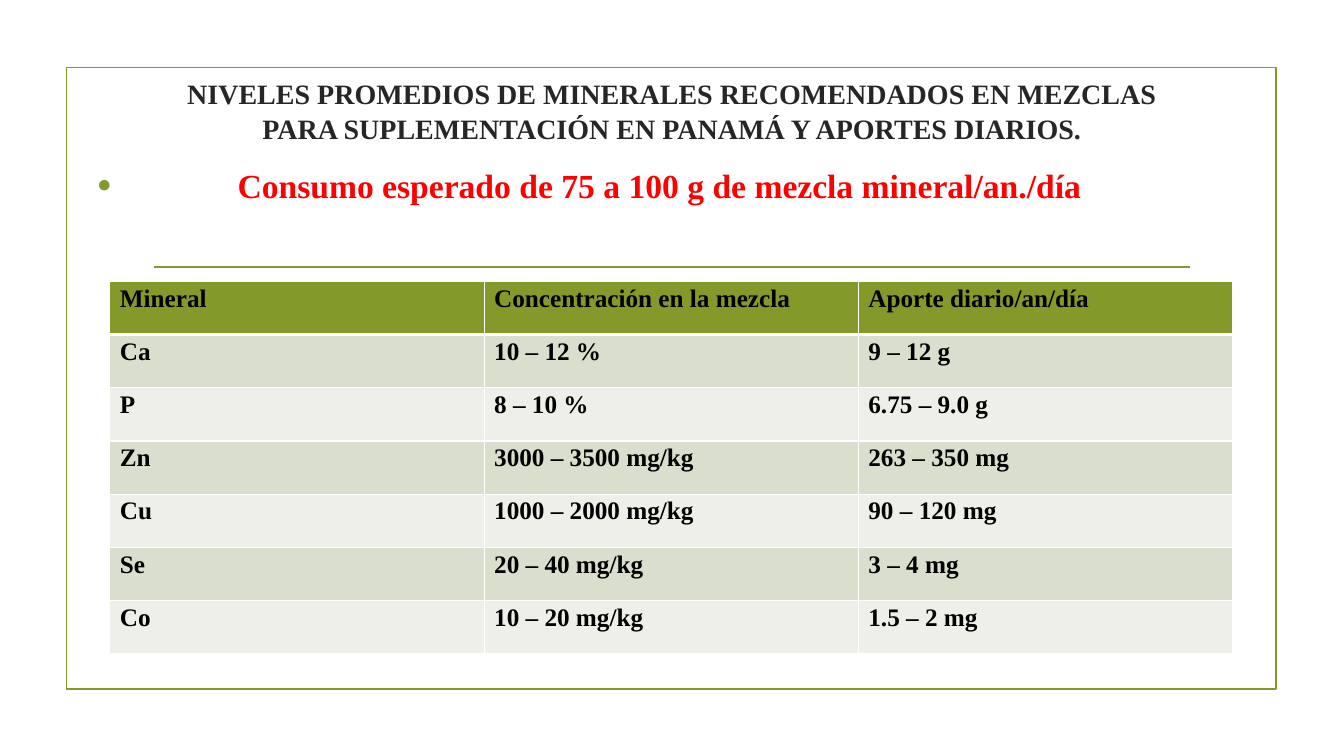
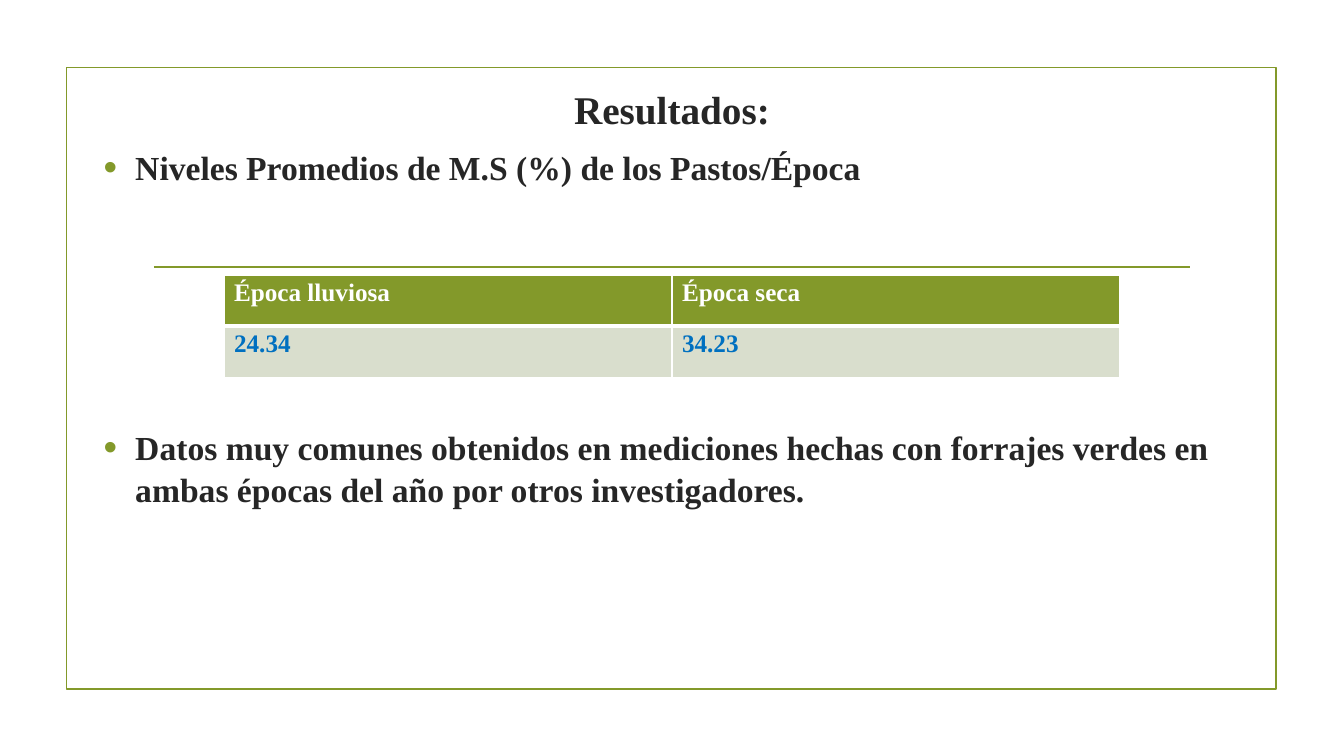
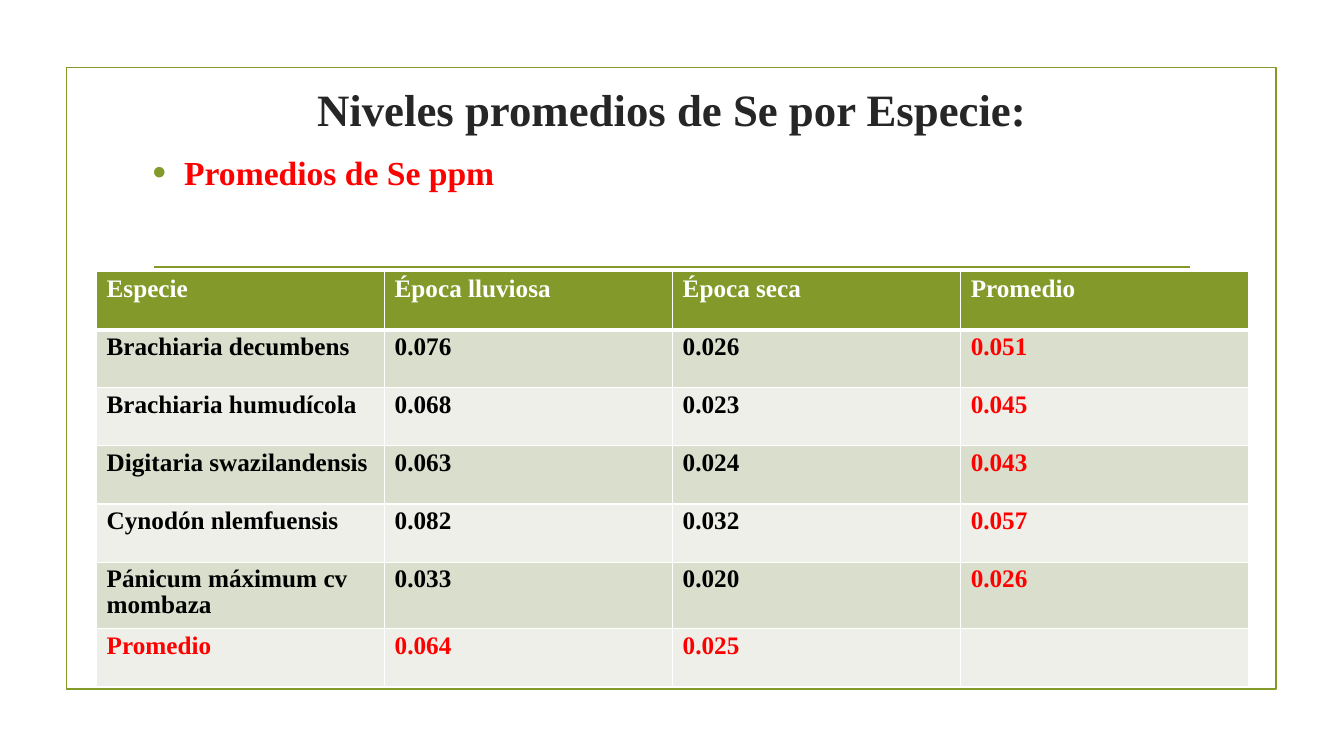
from lxml import etree
from pptx import Presentation
from pptx.dml.color import RGBColor
from pptx.enum.shapes import MSO_CONNECTOR, MSO_SHAPE
from pptx.enum.text import MSO_ANCHOR, PP_ALIGN
from pptx.oxml.ns import qn
from pptx.util import Pt

RECT = MSO_SHAPE.RECTANGLE
STRAIGHT = MSO_CONNECTOR.STRAIGHT
MIDDLE = MSO_ANCHOR.MIDDLE
CENTER = PP_ALIGN.CENTER

FONT = "Times New Roman"
COLORS = {
    "green": "83992A", "dark": "262626", "red": "FF0000", "blue": "0070C0",
    "black": "000000", "white": "FFFFFF", "band1": "D9DECD", "band2": "EDEFE8",
}
INDENT = 22.5

MINERALS = [
    ("Mineral", "Concentración en la mezcla", "Aporte diario/an/día"),
    ("Ca", "10 – 12 %", "9 – 12 g"),
    ("P", "8 – 10 %", "6.75 – 9.0 g"),
    ("Zn", "3000 – 3500 mg/kg", "263 – 350 mg"),
    ("Cu", "1000 – 2000 mg/kg", "90 – 120 mg"),
    ("Se", "20 – 40 mg/kg", "3 – 4 mg"),
    ("Co", "10 – 20 mg/kg", "1.5 – 2 mg"),
]
DRY_MATTER = [("Época lluviosa", "Época seca"), ("24.34", "34.23")]
SELENIUM = [
    ("Especie", "Época lluviosa", "Época seca", "Promedio"),
    ("Brachiaria decumbens", "0.076", "0.026", "0.051"),
    ("Brachiaria humudícola", "0.068", "0.023", "0.045"),
    ("Digitaria swazilandensis", "0.063", "0.024", "0.043"),
    ("Cynodón nlemfuensis", "0.082", "0.032", "0.057"),
    ("Pánicum máximum cv mombaza", "0.033", "0.020", "0.026"),
    ("Promedio", "0.064", "0.025", ""),
]


def rgb(name):
    """Return the palette colour."""
    return RGBColor.from_string(COLORS[name])


def add_text(p, text, size, color, **formats):
    """Write one bold run and format its paragraph."""
    for name, value in formats.items():
        setattr(p, name, value)
    r = p.add_run()
    r.text = text
    for name, value in {"name": FONT, "size": Pt(size), "bold": True}.items():
        setattr(r.font, name, value)
    r.font.color.rgb = rgb(color)


def add_box(s, left, top, width, height):
    """Add a wrapping text box and return its text frame."""
    tf = s.shapes.add_textbox(Pt(left), Pt(top), Pt(width), Pt(height)).text_frame
    tf.word_wrap = True
    return tf


def style_line(line):
    """Give a line the shared colour and width."""
    line.color.rgb = rgb("green")
    line.width = Pt(1.25)


def add_slide(prs, title, size, top, height):
    """Add a slide with frame, rule and title."""
    s = prs.slides.add_slide(prs.slide_layouts[6])
    frame = s.shapes.add_shape(RECT, Pt(47.5), Pt(48.2), Pt(864), Pt(444))
    frame.shadow.inherit = False
    frame.fill.background()
    style_line(frame.line)
    rule = s.shapes.add_connector(STRAIGHT, Pt(110), Pt(190.8), Pt(850.3), Pt(190.8))
    style_line(rule.line)
    etree.SubElement(rule._element.spPr, qn("a:effectLst"))
    tf = add_box(s, 102, top, 756, height)
    tf.vertical_anchor = MIDDLE
    add_text(tf.paragraphs[0], title, size, "dark", alignment=CENTER, line_spacing=1.05)
    return s


def add_bullet(p, text, color, indent=INDENT, before=0):
    """Write a bulleted paragraph with a hanging indent."""
    pPr = p._p.get_or_add_pPr()
    pPr.set("marL", str(Pt(indent)))
    pPr.set("indent", str(-Pt(indent)))
    clr = etree.SubElement(pPr, qn("a:buClr"))
    etree.SubElement(clr, qn("a:srgbClr"), val=COLORS["green"])
    etree.SubElement(pPr, qn("a:buSzPct"), val="115000")
    etree.SubElement(pPr, qn("a:buFont"), typeface="Arial")
    etree.SubElement(pPr, qn("a:buChar"), char="•")
    add_text(p, text, 24, color, line_spacing=1.05,
             space_before=Pt(before), space_after=Pt(6))


def add_borders(cell, bottom):
    """Draw white borders around a cell."""
    tcPr = cell._tc.get_or_add_tcPr()
    for side, width in {"lnL": 1, "lnR": 1, "lnT": 1, "lnB": bottom}.items():
        ln = etree.SubElement(tcPr, qn(f"a:{side}"), w=str(Pt(width)))
        fill = etree.SubElement(ln, qn("a:solidFill"))
        etree.SubElement(fill, qn("a:srgbClr"), val=COLORS["white"])


def add_table(s, rows, left, top, width, row_height, color_of):
    """Add a banded table whose text colours come from color_of(row, column)."""
    n, m = len(rows), len(rows[0])
    table = s.shapes.add_table(n, m, Pt(left), Pt(top), Pt(width), Pt(row_height * n)).table
    for i, row in enumerate(rows):
        table.rows[i].height = Pt(row_height)
        fill = "green" if i == 0 else ("band2", "band1")[i % 2]
        for j, text in enumerate(row):
            cell = table.cell(i, j)
            add_borders(cell, 1 if i else 3)
            cell.fill.solid()
            cell.fill.fore_color.rgb = rgb(fill)
            if text:
                add_text(cell.text_frame.paragraphs[0], text, 18, color_of(i, j),
                         line_spacing=0.93)


def selenium_color(i, j):
    """Mark the averages in red."""
    if i == 0:
        return "white"
    return "red" if i == len(SELENIUM) - 1 or j == 3 else "black"


def main():
    """Build the three slides."""
    prs = Presentation()
    prs.slide_width, prs.slide_height = Pt(960), Pt(540)

    s = add_slide(prs, "NIVELES PROMEDIOS DE MINERALES RECOMENDADOS EN MEZCLAS PARA "
                  "SUPLEMENTACIÓN EN PANAMÁ Y APORTES DIARIOS.", 20, 50.4, 56)
    tf = add_box(s, 62.6, 113, 836, 374)
    add_bullet(tf.paragraphs[0], "Consumo esperado de 75 a 100 g de mezcla mineral/an./día",
               "red", indent=100)
    add_table(s, MINERALS, 78.5, 201, 802, 38, lambda i, j: "black")

    s = add_slide(prs, "Resultados:", 28, 53.3, 46.8)
    tf = add_box(s, 67, 100, 826, 379)
    add_bullet(tf.paragraphs[0], "Niveles Promedios de M.S (%) de los Pastos/Época", "dark")
    add_bullet(tf.add_paragraph(), "Datos muy comunes obtenidos en mediciones hechas con "
               "forrajes verdes en ambas épocas del año por otros investigadores.",
               "dark", before=163.6)
    add_table(s, DRY_MATTER, 160, 196.6, 640, 36.5, lambda i, j: "blue" if i else "white")

    s = add_slide(prs, "Niveles promedios de Se por Especie:", 32, 41.8, 69)
    tf = add_box(s, 102, 103.7, 756, 358.6)
    add_bullet(tf.paragraphs[0], "Promedios de Se ppm", "red")
    add_table(s, SELENIUM, 69, 194, 823, 41.5, selenium_color)

    prs.save("out.pptx")


if __name__ == "__main__":
    main()
